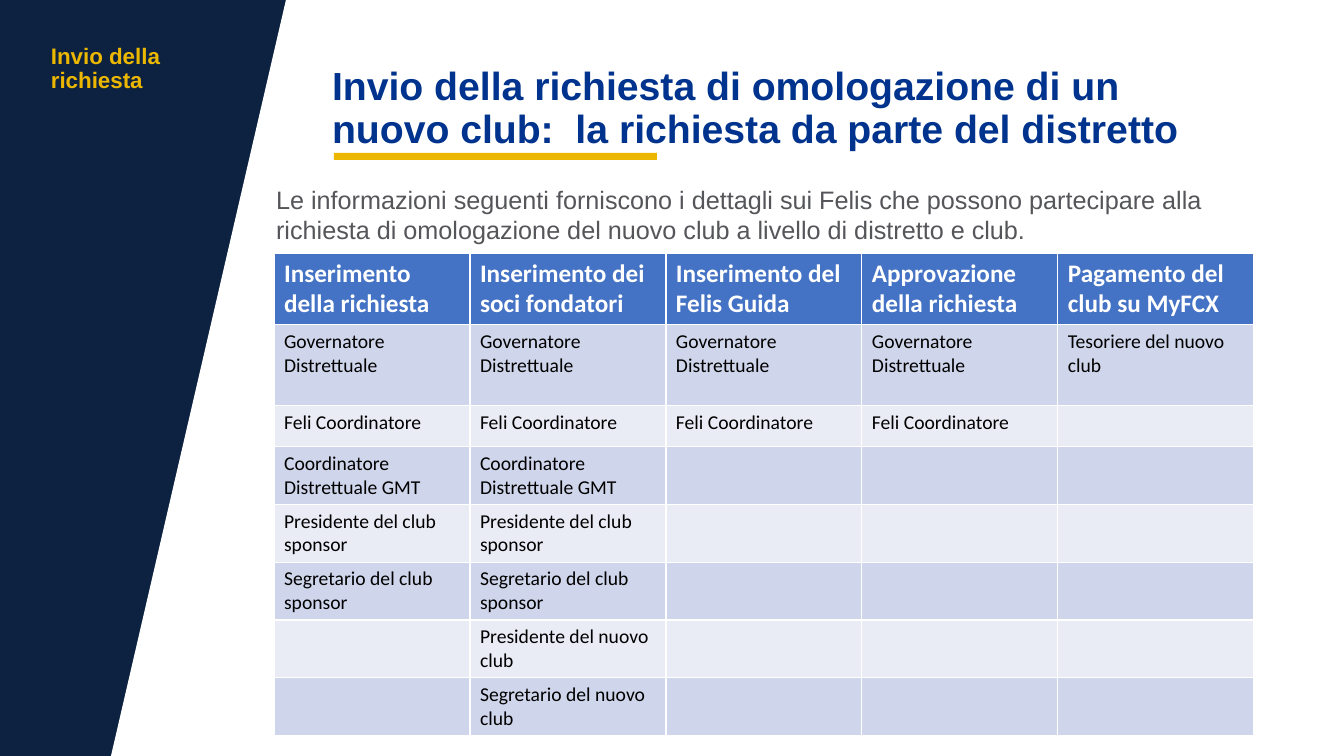
from dataclasses import dataclass
from itertools import zip_longest

from lxml.etree import SubElement
from pptx import Presentation
from pptx.dml.color import RGBColor
from pptx.enum.shapes import MSO_SHAPE as Preset
from pptx.enum.text import MSO_ANCHOR as Anchor, MSO_AUTO_SIZE as AutoSize, PP_ALIGN as Align
from pptx.oxml.ns import qn
from pptx.shapes.base import BaseShape
from pptx.slide import Slide
from pptx.text.text import TextFrame
from pptx.util import Emu, Pt


@dataclass(frozen=True)
class Theme:
    navy: RGBColor = RGBColor.from_string("0D2240")
    white: RGBColor = RGBColor.from_string("FFFFFF")
    black: RGBColor = RGBColor.from_string("000000")
    gold: RGBColor = RGBColor.from_string("EBB700")
    blue: RGBColor = RGBColor.from_string("00338D")
    gray: RGBColor = RGBColor.from_string("55565A")
    header: RGBColor = RGBColor.from_string("4472C4")
    odd_row: RGBColor = RGBColor.from_string("CFD5EA")
    even_row: RGBColor = RGBColor.from_string("E9EBF5")
    heading_font: str = "Arial"
    table_font: str = "Calibri"
    title_size: int = 28
    body_size: int = 18
    label_size: int = 16
    cell_size: int = 14


@dataclass(frozen=True)
class Box:
    left: int
    top: int
    width: int
    height: int


@dataclass(frozen=True)
class Column:
    heading: str
    people: tuple[str, ...]


THEME = Theme()
PAGE = Box(0, 0, 1344, 756)
LABEL = Box(41, 40, 192, 107)
INTRO = Box(266, 179, 979, 86)
RULE = Box(334, 153, 323, 7)
TITLE = Box(322, 62, 923, 106)
GRID = Box(274, 253, 980, 478)
ROW_HEIGHTS = (71, 81, 41, 57, 57, 57, 57, 57)
PANEL_CORNERS = ((286, 0), (1344, 0), (1344, 756), (111, 756))

APPROVERS = ("Governatore Distrettuale", "Feli Coordinatore")
SPONSORS = (
    *APPROVERS,
    "Coordinatore Distrettuale GMT",
    "Presidente del club sponsor",
    "Segretario del club sponsor",
)
COLUMNS = (
    Column("Inserimento della richiesta", SPONSORS),
    Column(
        "Inserimento dei soci fondatori",
        (*SPONSORS, "Presidente del nuovo club", "Segretario del nuovo club"),
    ),
    Column("Inserimento del Felis Guida", APPROVERS),
    Column("Approvazione della richiesta", APPROVERS),
    Column("Pagamento del club su MyFCX", ("Tesoriere del nuovo club",)),
)


def px(length: int) -> Emu:
    return Emu(round(length * 914400 / 100.8))


def edges(box: Box) -> tuple[Emu, Emu, Emu, Emu]:
    return px(box.left), px(box.top), px(box.width), px(box.height)


def write(
    frame: TextFrame,
    text: str,
    *,
    size: int,
    color: RGBColor,
    font: str = THEME.heading_font,
    bold: bool = False,
    spacing: float = 1.0,
) -> None:
    frame.word_wrap = True
    para = frame.paragraphs[0]
    para.alignment = Align.LEFT
    para.line_spacing = spacing
    span = para.add_run()
    span.text = text
    span.font.name = font
    span.font.size = Pt(size)
    span.font.bold = bold
    span.font.color.rgb = color


def paint(shape: BaseShape, color: RGBColor) -> None:
    shape.shadow.inherit = False
    shape.fill.solid()
    shape.fill.fore_color.rgb = color
    shape.line.fill.background()


def add_bar(page: Slide, box: Box, color: RGBColor) -> None:
    paint(page.shapes.add_shape(Preset.RECTANGLE, *edges(box)), color)


def add_panel(page: Slide) -> None:
    start, *corners = [(px(x), px(y)) for x, y in PANEL_CORNERS]
    builder = page.shapes.build_freeform(*start)
    builder.add_line_segments(corners, close=True)
    paint(builder.convert_to_shape(), THEME.white)


def place(holder: BaseShape, box: Box) -> TextFrame:
    holder.left, holder.top, holder.width, holder.height = edges(box)
    holder.element.getparent().append(holder.element)
    frame = holder.text_frame
    frame.auto_size = AutoSize.NONE
    frame.vertical_anchor = Anchor.TOP
    return frame


def remove_bullet(frame: TextFrame) -> None:
    properties = frame.paragraphs[0]._p.get_or_add_pPr()
    properties.set("marL", "0")
    properties.set("indent", "0")
    SubElement(properties, qn("a:buNone"))


def add_roles_table(page: Slide) -> None:
    table = page.shapes.add_table(len(ROW_HEIGHTS), len(COLUMNS), *edges(GRID)).table
    for column in table.columns:
        column.width = px(GRID.width // len(COLUMNS))
    for row, height in zip(table.rows, ROW_HEIGHTS):
        row.height = px(height)
    entries = zip_longest(*((column.heading, *column.people) for column in COLUMNS), fillvalue="")
    for index, texts in enumerate(entries):
        is_header = index == 0
        band = THEME.odd_row if index % 2 else THEME.even_row
        for cell, text in zip(table.rows[index].cells, texts):
            cell.fill.solid()
            cell.fill.fore_color.rgb = THEME.header if is_header else band
            if text:
                write(
                    cell.text_frame,
                    text,
                    size=THEME.body_size if is_header else THEME.cell_size,
                    color=THEME.white if is_header else THEME.black,
                    font=THEME.table_font,
                    bold=is_header,
                )


def main() -> None:
    deck = Presentation()
    deck.slide_width, deck.slide_height = px(PAGE.width), px(PAGE.height)
    page = deck.slides.add_slide(deck.slide_layouts[1])
    title, body = page.placeholders
    add_bar(page, PAGE, THEME.navy)
    add_panel(page)
    label = page.shapes.add_textbox(*edges(LABEL)).text_frame
    write(label, "Invio della richiesta", size=THEME.label_size, color=THEME.gold, bold=True, spacing=0.9)
    intro = place(body, INTRO)
    write(
        intro,
        "Le informazioni seguenti forniscono i dettagli sui Felis che possono partecipare alla "
        "richiesta di omologazione del nuovo club a livello di distretto e club.",
        size=THEME.body_size,
        color=THEME.gray,
    )
    remove_bullet(intro)
    add_bar(page, RULE, THEME.gold)
    write(
        place(title, TITLE),
        "Invio della richiesta di omologazione di un nuovo club:  la richiesta da parte del distretto",
        size=THEME.title_size,
        color=THEME.blue,
        bold=True,
        spacing=0.9,
    )
    add_roles_table(page)
    deck.save("out.pptx")


if __name__ == "__main__":
    main()
